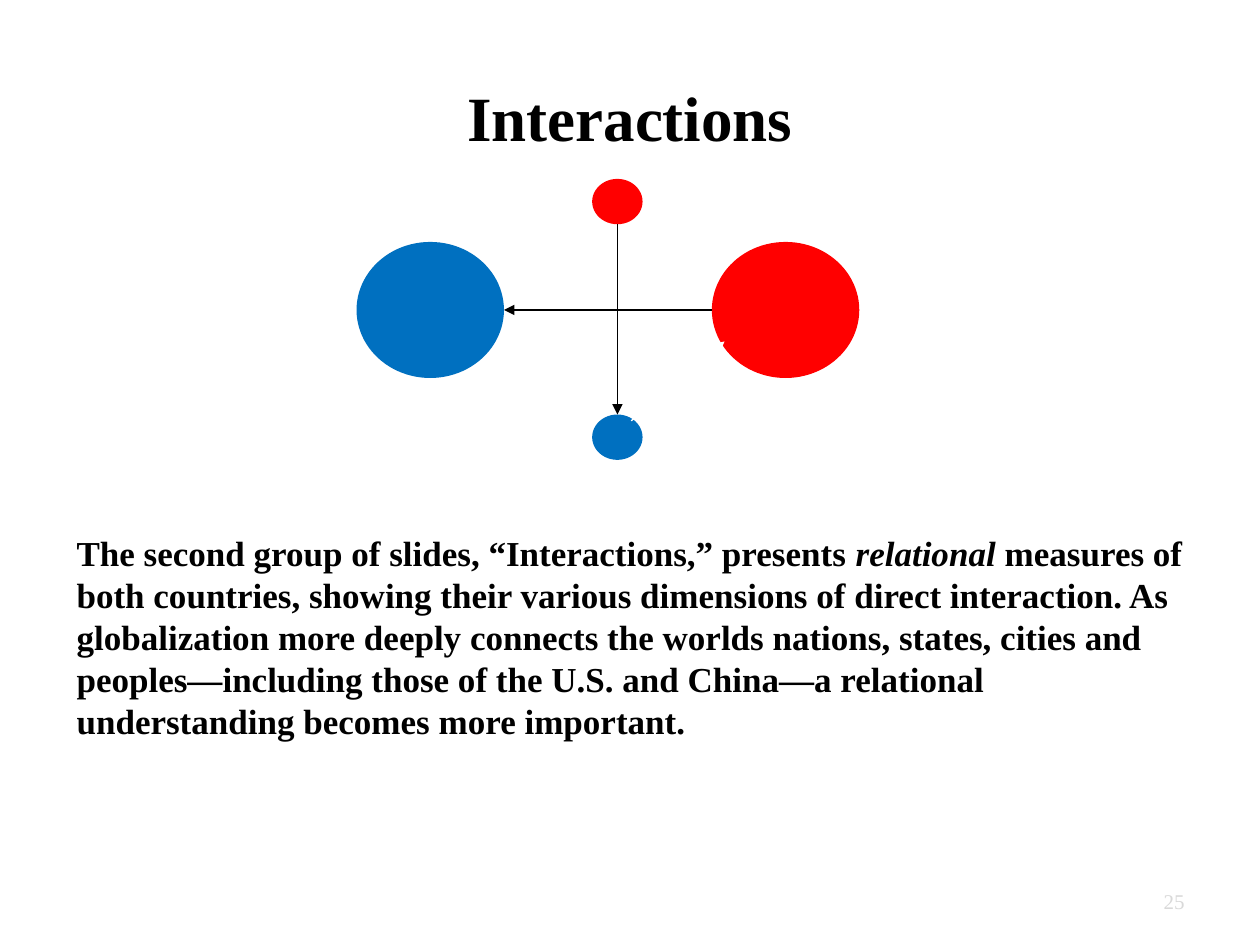
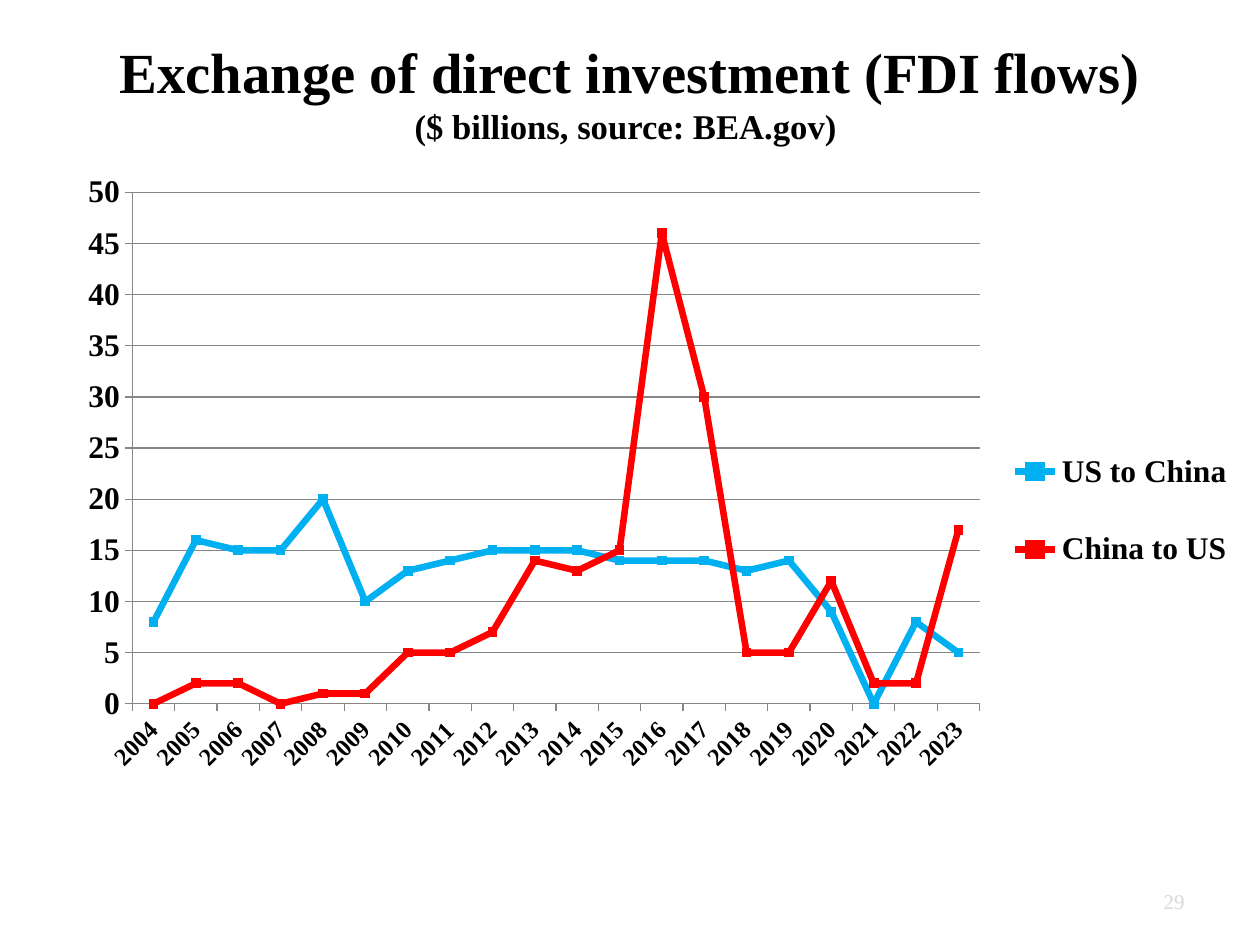
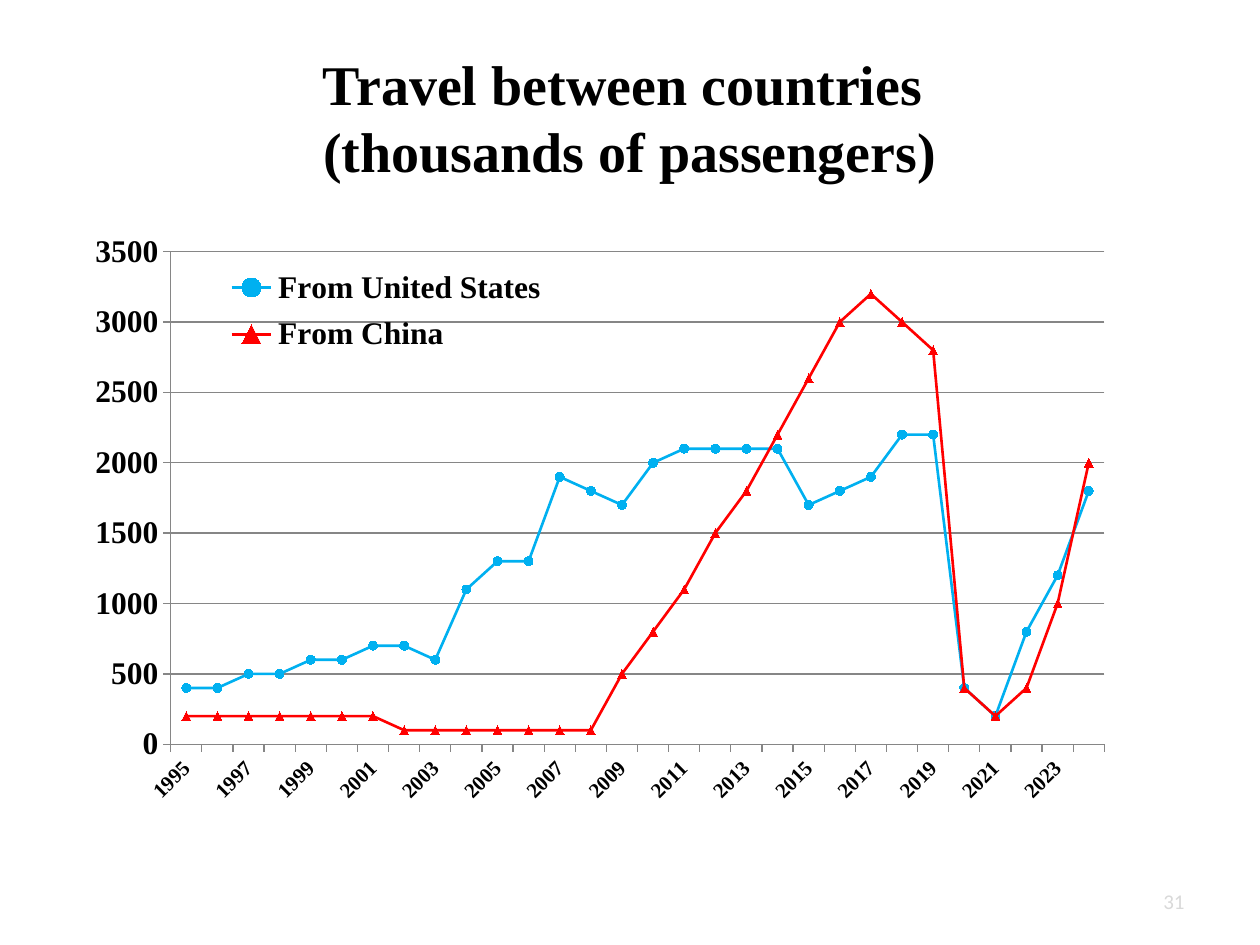
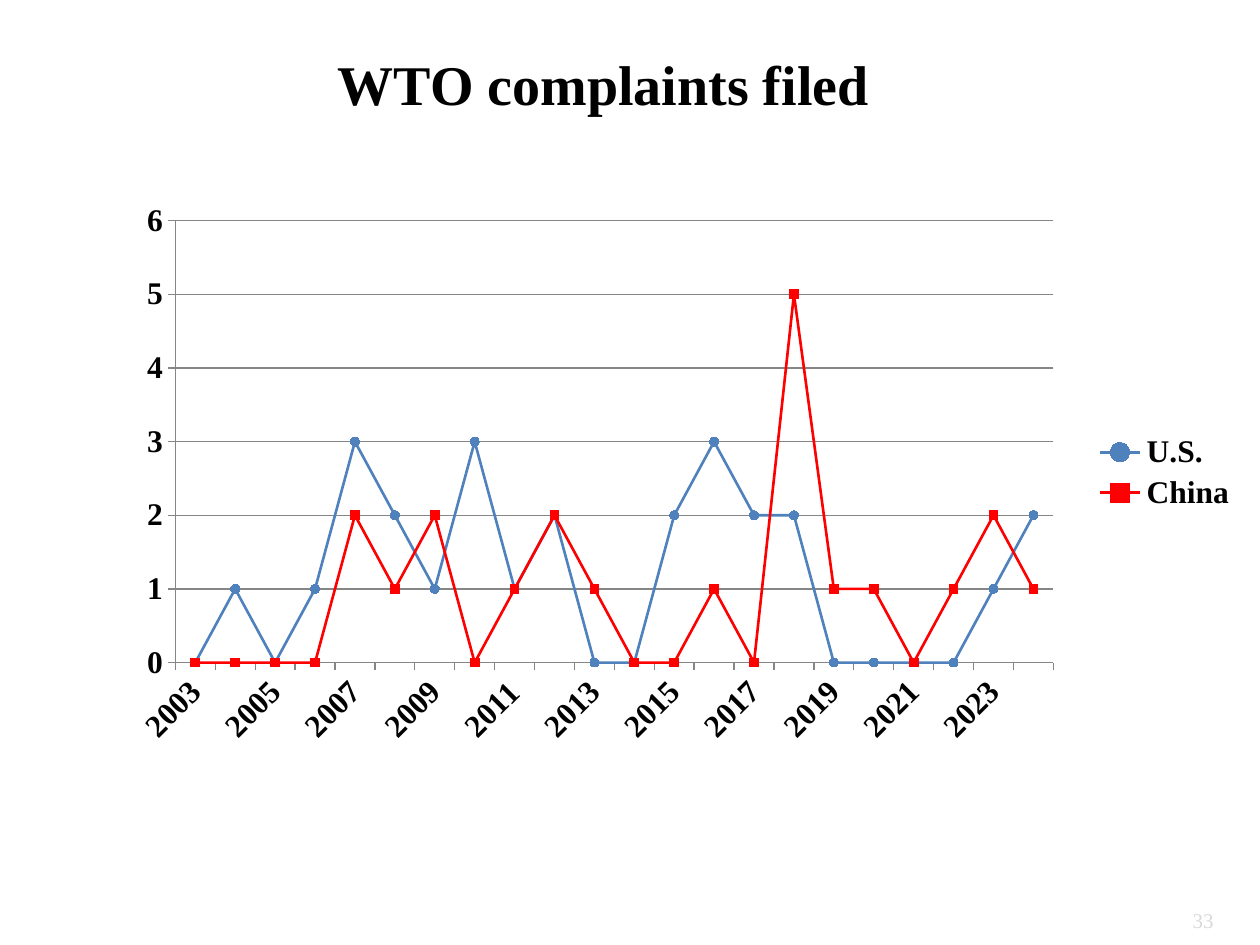
from lxml import etree
from pptx import Presentation
from pptx.chart.data import CategoryChartData
from pptx.dml.color import RGBColor
from pptx.enum.chart import XL_CHART_TYPE as ChartType
from pptx.enum.chart import XL_LEGEND_POSITION as LegendPosition
from pptx.enum.chart import XL_MARKER_STYLE as Marker
from pptx.enum.chart import XL_TICK_MARK as TickMark
from pptx.enum.shapes import MSO_CONNECTOR as Connector
from pptx.enum.shapes import MSO_SHAPE as Shape
from pptx.enum.text import MSO_ANCHOR as Anchor
from pptx.enum.text import PP_ALIGN as Align
from pptx.oxml.ns import qn
from pptx.util import Inches, Pt

BLACK = RGBColor(0x00, 0x00, 0x00)
WHITE = RGBColor(0xFF, 0xFF, 0xFF)
PALE_GREY = RGBColor(0xD9, 0xD9, 0xD9)
GRID_GREY = RGBColor(0x86, 0x86, 0x86)
CHINA_RED = RGBColor(0xFF, 0x00, 0x00)
US_BLUE = RGBColor(0x00, 0x70, 0xC0)
SKY_BLUE = RGBColor(0x00, 0xB0, 0xF0)
STEEL_BLUE = RGBColor(0x4F, 0x81, 0xBD)
SERIF = "Times New Roman"
TITLE_BOX = (0.5, 0.3, 9, 1.25)
NUMBER_BOX = (7.17, 6.95, 2.33, 0.4)


def set_font(font, size, color=BLACK, bold=True, name=SERIF):
    """Give a font its face, size, weight and colour."""
    font.name, font.size, font.bold = name, Pt(size), bold
    font.color.rgb = color


def add_text(slide, box, text, size, align=Align.LEFT, anchor=Anchor.TOP, **style):
    """Place a wrapped one-paragraph text and return the paragraph."""
    frame = slide.shapes.add_textbox(*map(Inches, box)).text_frame
    frame.word_wrap = True
    frame.vertical_anchor = anchor
    paragraph = frame.paragraphs[0]
    paragraph.text = text
    paragraph.alignment = align
    set_font(paragraph.font, size, **style)
    return paragraph


def add_title(slide, text, size=32, box=TITLE_BOX, anchor=Anchor.MIDDLE):
    """Place the centred bold title."""
    return add_text(slide, box, text, size, Align.CENTER, anchor)


def add_number(slide, number, box=NUMBER_BOX, name=SERIF):
    """Place the pale slide number at the bottom right."""
    add_text(slide, box, str(number), 12, Align.RIGHT, Anchor.MIDDLE,
             color=PALE_GREY, bold=False, name=name)


def add_country(slide, box, color):
    """Draw one plain filled ellipse."""
    country = slide.shapes.add_shape(Shape.OVAL, *map(Inches, box))
    country.shadow.inherit = False
    country.fill.solid()
    country.fill.fore_color.rgb = color
    country.line.fill.background()


def add_arrow(slide, start, end, color):
    """Draw a thin straight arrow from start to end."""
    arrow = slide.shapes.add_connector(Connector.STRAIGHT, *map(Inches, start + end))
    arrow.line.color.rgb = color
    arrow.line.width = Pt(0.75)
    etree.SubElement(arrow.line._get_or_add_ln(), qn("a:tailEnd"), type="triangle")
    etree.SubElement(arrow._element.spPr, qn("a:effectLst"))


def add_exchange_diagram(slide, left, top):
    """Draw the large and small country pairs with the arrows between them."""
    def at(x, y):
        return left + x, top + y

    large, small = (1.17, 1.08), (0.4, 0.36)
    add_country(slide, at(2.82, 0.5) + large, CHINA_RED)
    add_country(slide, at(1.87, 0) + small, CHINA_RED)
    add_country(slide, at(1.87, 1.87) + small, US_BLUE)
    add_arrow(slide, at(2.07, 0.36), at(2.07, 1.87), BLACK)
    add_arrow(slide, at(1.12, 0.81), at(1.93, 0.31), WHITE)
    add_country(slide, at(0, 0.5) + large, US_BLUE)
    add_arrow(slide, at(2.82, 1.04), at(1.17, 1.04), BLACK)
    add_arrow(slide, at(2.18, 1.92), at(2.92, 1.29), WHITE)


def set_layout(parent, index, fractions, inner=False):
    """Fix a chart part at x, y, width and height fractions of the chart."""
    for automatic in parent.findall(qn("c:layout")):
        parent.remove(automatic)
    layout = etree.Element(qn("c:layout"))
    parent.insert(index, layout)
    manual = etree.SubElement(layout, qn("c:manualLayout"))
    settings = [("layoutTarget", "inner")] if inner else []
    settings += [("xMode", "edge"), ("yMode", "edge")]
    settings += zip("xywh", map(str, fractions))
    for tag, value in settings:
        etree.SubElement(manual, qn(f"c:{tag}"), val=value)


def style_axes(chart, top, step, year_size, year_skip):
    """Style the slanted year axis and the gridded value axis."""
    years, values = chart.category_axis, chart.value_axis
    for axis, size in ((years, year_size), (values, 18)):
        axis.major_tick_mark = TickMark.OUTSIDE
        axis.format.line.color.rgb = GRID_GREY
        set_font(axis.tick_labels.font, size)
    values.minimum_scale, values.maximum_scale, values.major_unit = 0, top, step
    values.major_gridlines.format.line.color.rgb = GRID_GREY
    years._element.find(qn("c:txPr")).find(qn("a:bodyPr")).set("rot", "-2700000")
    skip = etree.Element(qn("c:tickLblSkip"), val=str(year_skip))
    years._element.find(qn("c:noMultiLvlLbl")).addprevious(skip)


def add_line_chart(slide, box, first_year, lines, plot, top, step,
                   year_size=18, year_skip=2, width=1.5, legend_area=None):
    """Draw yearly lines given as name, colour, marker, marker colour and values."""
    data = CategoryChartData()
    data.categories = [str(first_year + i) for i in range(len(lines[0][-1]))]
    for name, *_, values in lines:
        data.add_series(name, values)
    chart = slide.shapes.add_chart(ChartType.LINE_MARKERS, *map(Inches, box), data).chart
    set_font(chart.font, 18)
    chart.has_title = False
    chart.plots[0].vary_by_categories = False
    for series, (_, color, marker, marker_color, _) in zip(chart.plots[0].series, lines):
        series.smooth = False
        series.format.line.color.rgb = color
        series.format.line.width = Pt(width)
        series.marker.style, series.marker.size = marker, 5
        series.marker.format.fill.solid()
        series.marker.format.fill.fore_color.rgb = marker_color
        series.marker.format.line.color.rgb = marker_color
    style_axes(chart, top, step, year_size, year_skip)
    set_layout(chart._chartSpace.chart.plotArea, 0, plot, inner=True)
    chart.has_legend = True
    chart.legend.position = LegendPosition.RIGHT
    chart.legend.include_in_layout = False
    set_font(chart.legend.font, 18)
    if legend_area:
        set_layout(chart.legend._element, 1, legend_area)


def build_interactions(slide):
    """Build the section opener with its diagram and introduction."""
    add_title(slide, "Interactions", 36)
    introduction = add_text(
        slide, (0.51, 4.17, 9, 4.95),
        "The second group of slides, “Interactions,” presents ", 20)
    introduction.space_before = Pt(4)
    emphasis = introduction.add_run()
    emphasis.text = "relational "
    emphasis.font.italic = True
    introduction.add_run().text = (
        "measures of both countries, showing their various dimensions of direct "
        "interaction. As globalization more deeply connects the worlds nations, "
        "states, cities and peoples—including those of the U.S. and China—a "
        "relational understanding becomes more important.")
    add_number(slide, 25)
    add_exchange_diagram(slide, 2.83, 1.42)


def build_investment(slide):
    """Build the slide on direct investment flows."""
    heading = add_title(slide, "Exchange of direct investment (FDI flows)\v", 32.4,
                        (0.5, 0.24, 9, 1.12), Anchor.TOP)
    units = heading.add_run()
    units.text = "($ billions, source: BEA.gov) "
    units.font.size = Pt(19.8)
    add_line_chart(
        slide, (0.49, 1.28, 9.34, 4.95), 2004,
        [("US to China", SKY_BLUE, Marker.SQUARE, SKY_BLUE,
          [8, 16, 15, 15, 20, 10, 13, 14, 15, 15, 15, 14, 14, 14, 13, 14, 9, 0, 8, 5]),
         ("China to US", CHINA_RED, Marker.SQUARE, CHINA_RED,
          [0, 2, 2, 0, 1, 1, 5, 5, 7, 14, 13, 15, 46, 30, 5, 5, 12, 2, 2, 17])],
        plot=(0.06, 0.05, 0.72, 0.82), top=50, step=5, year_size=14, year_skip=1,
        width=3.75, legend_area=(0.8, 0.4, 0.2, 0.32))
    add_number(slide, 29)


def build_travel(slide):
    """Build the slide on passengers between the countries."""
    add_title(slide, "Travel between countries \v(thousands of passengers)")
    add_line_chart(
        slide, (0.5, 1.75, 9.5, 4.95), 1995,
        [("From United States", SKY_BLUE, Marker.CIRCLE, SKY_BLUE,
          [400, 400, 500, 500, 600, 600, 700, 700, 600, 1100, 1300, 1300, 1900, 1800,
           1700, 2000, 2100, 2100, 2100, 2100, 1700, 1800, 1900, 2200, 2200, 400, 200,
           800, 1200, 1800]),
         ("From China", CHINA_RED, Marker.TRIANGLE, CHINA_RED,
          [200, 200, 200, 200, 200, 200, 200, 100, 100, 100, 100, 100, 100, 100, 500,
           800, 1100, 1500, 1800, 2200, 2600, 3000, 3200, 3000, 2800, 400, 200, 400,
           1000, 2000])],
        plot=(0.09, 0.05, 0.78, 0.79), top=3500, step=500, year_size=12,
        legend_area=(0.12, 0.06, 0.3, 0.17))
    add_number(slide, 31, name="Calibri")


def build_complaints(slide):
    """Build the slide on trade complaints."""
    add_title(slide, "WTO complaints filed", box=(0.29, 0.2, 9, 0.92))
    add_number(slide, 33, (7.4, 7.1, 2.33, 0.4))
    add_line_chart(
        slide, (0.75, 1.53, 9.17, 4.44), 2003,
        [("U.S.", STEEL_BLUE, Marker.CIRCLE, STEEL_BLUE,
          [0, 1, 0, 1, 3, 2, 1, 3, 1, 2, 0, 0, 2, 3, 2, 2, 0, 0, 0, 0, 1, 2]),
         ("China", CHINA_RED, Marker.SQUARE, CHINA_RED,
          [0, 0, 0, 0, 2, 1, 2, 0, 1, 2, 1, 0, 0, 1, 0, 5, 1, 1, 0, 1, 2, 1])],
        plot=(0.07, 0.05, 0.76, 0.79), top=6, step=1)


def main():
    """Build the four slides and save them."""
    deck = Presentation()
    deck.slide_width, deck.slide_height = Inches(10), Inches(7.5)
    blank = deck.slide_layouts[6]
    for build in (build_interactions, build_investment, build_travel, build_complaints):
        build(deck.slides.add_slide(blank))
    deck.save("out.pptx")


if __name__ == "__main__":
    main()
